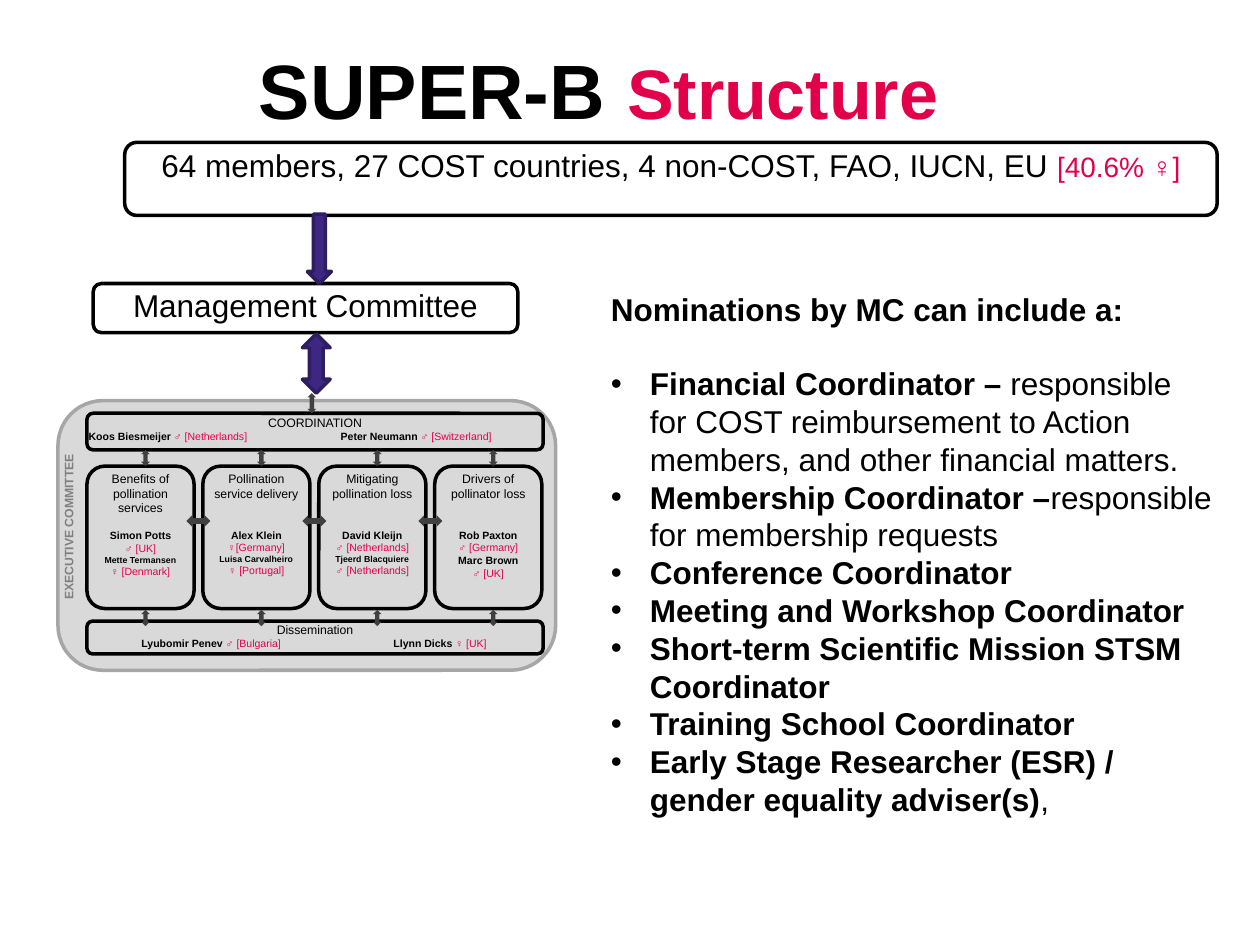
"""Build the SUPER-B structure slide."""
from lxml import etree
from pptx import Presentation
from pptx.dml.color import RGBColor
from pptx.enum.shapes import MSO_SHAPE
from pptx.enum.text import MSO_ANCHOR, MSO_AUTO_SIZE, PP_ALIGN
from pptx.oxml.ns import qn
from pptx.util import Inches, Pt

ROUNDED = MSO_SHAPE.ROUNDED_RECTANGLE
DOWN_ARROW = MSO_SHAPE.DOWN_ARROW
DOUBLE_ARROW = MSO_SHAPE.UP_DOWN_ARROW
CENTER = PP_ALIGN.CENTER
LEFT = PP_ALIGN.LEFT
TOP = MSO_ANCHOR.TOP
NO_AUTOFIT = MSO_AUTO_SIZE.NONE

BLACK = "000000"
PINK = "E3004A"
GRAY = "404040"
PURPLE = "3E2782"
DARK_PURPLE = "2E1D60"


def write_text(shape, paragraphs, alignment=CENTER, margins=(0, 0), wrap=True):
    """Fill a shape with (space before, runs) pairs; a run is text, size, colour, bold."""
    frame = shape.text_frame
    frame.word_wrap = wrap
    frame.auto_size = NO_AUTOFIT
    frame.vertical_anchor = TOP
    frame.margin_left = frame.margin_right = Inches(margins[0])
    frame.margin_top = frame.margin_bottom = Inches(margins[1])
    for index, (space_before, runs) in enumerate(paragraphs):
        paragraph = frame.add_paragraph() if index else frame.paragraphs[0]
        paragraph.alignment = alignment
        if space_before:
            paragraph.space_before = Pt(space_before)
        for text, size, color, bold in runs:
            run = paragraph.add_run()
            run.text = text
            run.font.name = "Arial"
            run.font.size = Pt(size)
            run.font.bold = bold
            run.font.color.rgb = RGBColor.from_string(color)


def add_box(parent, kind, left, top, width, height, fill=None, line=None, rotation=0):
    """Add a preset shape with an optional fill and a 2 pt outline."""
    shape = parent.add_shape(kind, Inches(left), Inches(top), Inches(width), Inches(height))
    shape.shadow.inherit = False
    shape.rotation = rotation
    if fill:
        shape.fill.solid()
        shape.fill.fore_color.rgb = RGBColor.from_string(fill)
    else:
        shape.fill.background()
    if line:
        shape.line.color.rgb = RGBColor.from_string(line)
        shape.line.width = Pt(2)
    else:
        shape.line.fill.background()
    return shape


presentation = Presentation()
presentation.slide_width = Inches(10)
presentation.slide_height = Inches(7.5)
slide = presentation.slides.add_slide(presentation.slide_layouts[5])

title = slide.shapes.title
title.left, title.top = Inches(0), Inches(0.29)
title.width, title.height = Inches(9.5), Inches(0.84)
write_text(title, [(0, [("SUPER-B ", 44, BLACK, True), ("Structure", 40, PINK, True)])],
           margins=(0.1, 0.05))

members = add_box(slide.shapes, ROUNDED, 0.99, 1.13, 8.67, 0.58, line=BLACK)
write_text(members, [(0, [
    ("64 members, 27 COST countries, 4 non-COST, FAO, IUCN, EU ", 18, BLACK, False),
    ("[40.6% ♀]", 16, PINK, False),
])])

executive = slide.shapes.add_group_shape().shapes
add_box(executive, ROUNDED, 0.46, 3.18, 3.95, 2.14, fill="D9D9D9", line="A6A6A6")

work_packages = [
    ("Benefits of pollination services", 8,
     [("Simon Potts", 6, "♂ ", "[UK]"), ("Mette Termansen", 5, "", "♀ [Denmark]")]),
    ("Pollination service delivery", 16,
     [("Alex Klein", 6, "", "♀[Germany]"), ("Luisa Carvalheiro", 5, "", "♀ [Portugal]")]),
    ("Mitigating pollination loss", 16,
     [("David Kleijn", 6, "♂ ", "[Netherlands]"),
      ("Tjeerd Blacquiere", 5, "♂ ", "[Netherlands]")]),
    ("Drivers of pollinator loss", 16,
     [("Rob Paxton", 6, "♂ ", "[Germany]"), ("Marc Brown", 6, "♂ ", "[UK]")]),
]
for column, (topic, gap, leaders) in enumerate(work_packages):
    left = 0.69 + 0.92 * column
    package = add_box(executive, ROUNDED, left, 3.7, 0.85, 1.13, line=BLACK)
    paragraphs = [(0, [(topic, 7, BLACK, False)])]
    for index, (name, size, symbol, country) in enumerate(leaders):
        paragraphs.append((0 if index else gap, [(name, size, BLACK, True)]))
        paragraphs.append((0, [(symbol, 6, PINK, True), (country, 6, PINK, False)]))
    write_text(package, paragraphs)

bars = [
    (4.93, 0.26, "Dissemination", (0.42, 2.42),
     [("\tLyubomir Penev ", "♂ ", "[Bulgaria]"), ("\tLlynn Dicks ", "", "♀ [UK]")]),
    (3.28, 0.29, "COORDINATION", (2,),
     [("Koos Biesmeijer ", "♂ ", "[Netherlands]"), ("\tPeter Neumann ", "♂ ", "[Switzerland]")]),
]
for top, height, heading, tab_stops, people in bars:
    bar = add_box(executive, ROUNDED, 0.69, top, 3.62, height, line=BLACK)
    runs = []
    for name, symbol, country in people:
        runs += [(name, 6, BLACK, True), (symbol, 6, PINK, True), (country, 6, PINK, False)]
    write_text(bar, [(0, [(heading, 7, BLACK, False)]), (0, runs)])
    names = bar.text_frame.paragraphs[1]
    names.alignment = LEFT
    tab_list = etree.SubElement(names._p.get_or_add_pPr(), qn("a:tabLst"))
    for position in tab_stops:
        etree.SubElement(tab_list, qn("a:tab"), pos=str(Inches(position)), algn="l")

side_label = executive.add_textbox(Inches(-0.14), Inches(4.06), Inches(1.37), Inches(0.22))
side_label.rotation = 270
write_text(side_label, [(0, [("EXECUTIVE COMMITTEE", 7, "808080", True)])],
           alignment=LEFT, margins=(0.1, 0.05), wrap=False)

add_box(executive, DOUBLE_ARROW, 2.44, 3.12, 0.07, 0.16, fill=GRAY)
for column in range(4):
    for top in (3.57, 4.84):
        add_box(executive, DOUBLE_ARROW, 1.12 + 0.92 * column, top, 0.07, 0.13, fill=GRAY)
for gap in range(3):
    add_box(executive, DOUBLE_ARROW, 1.53 + 0.92 * gap, 4.04, 0.09, 0.19, fill=GRAY, rotation=270)

committee = add_box(slide.shapes, ROUNDED, 0.74, 2.25, 3.37, 0.39, line=BLACK)
write_text(committee, [(0, [("Management Committee", 18, BLACK, False)])])
add_box(slide.shapes, DOWN_ARROW, 2.44, 1.7, 0.19, 0.55, fill=PURPLE, line=DARK_PURPLE)
add_box(slide.shapes, DOUBLE_ARROW, 2.4, 2.65, 0.22, 0.47, fill=PURPLE, line=DARK_PURPLE)

roles = [
    ("Financial Coordinator – ",
     "responsible for COST reimbursement to Action members, and other financial matters."),
    ("Membership Coordinator –", "responsible for membership requests"),
    ("Conference Coordinator", ""),
    ("Meeting and Workshop Coordinator", ""),
    ("Short-term Scientific Mission STSM Coordinator", ""),
    ("Training School Coordinator", ""),
    ("Early Stage Researcher (ESR) / gender equality adviser(s)", ","),
]
paragraphs = [(0, [("Nominations by MC can include a:", 18, BLACK, True)])]
for index, (role, duty) in enumerate(roles):
    runs = [(role, 18, BLACK, True)]
    if duty:
        runs.append((duty, 18, BLACK, False))
    paragraphs.append((0 if index else 21, runs))
nominations = slide.shapes.add_textbox(Inches(4.75), Inches(2.25), Inches(5), Inches(4.34))
write_text(nominations, paragraphs, alignment=LEFT, margins=(0.1, 0.05))
for paragraph in nominations.text_frame.paragraphs[1:]:
    properties = paragraph._p.get_or_add_pPr()
    properties.set("marL", str(Inches(0.31)))
    properties.set("indent", str(-Inches(0.31)))
    etree.SubElement(properties, qn("a:buFont"), typeface="Arial")
    etree.SubElement(properties, qn("a:buChar"), char="•")

presentation.save("out.pptx")
